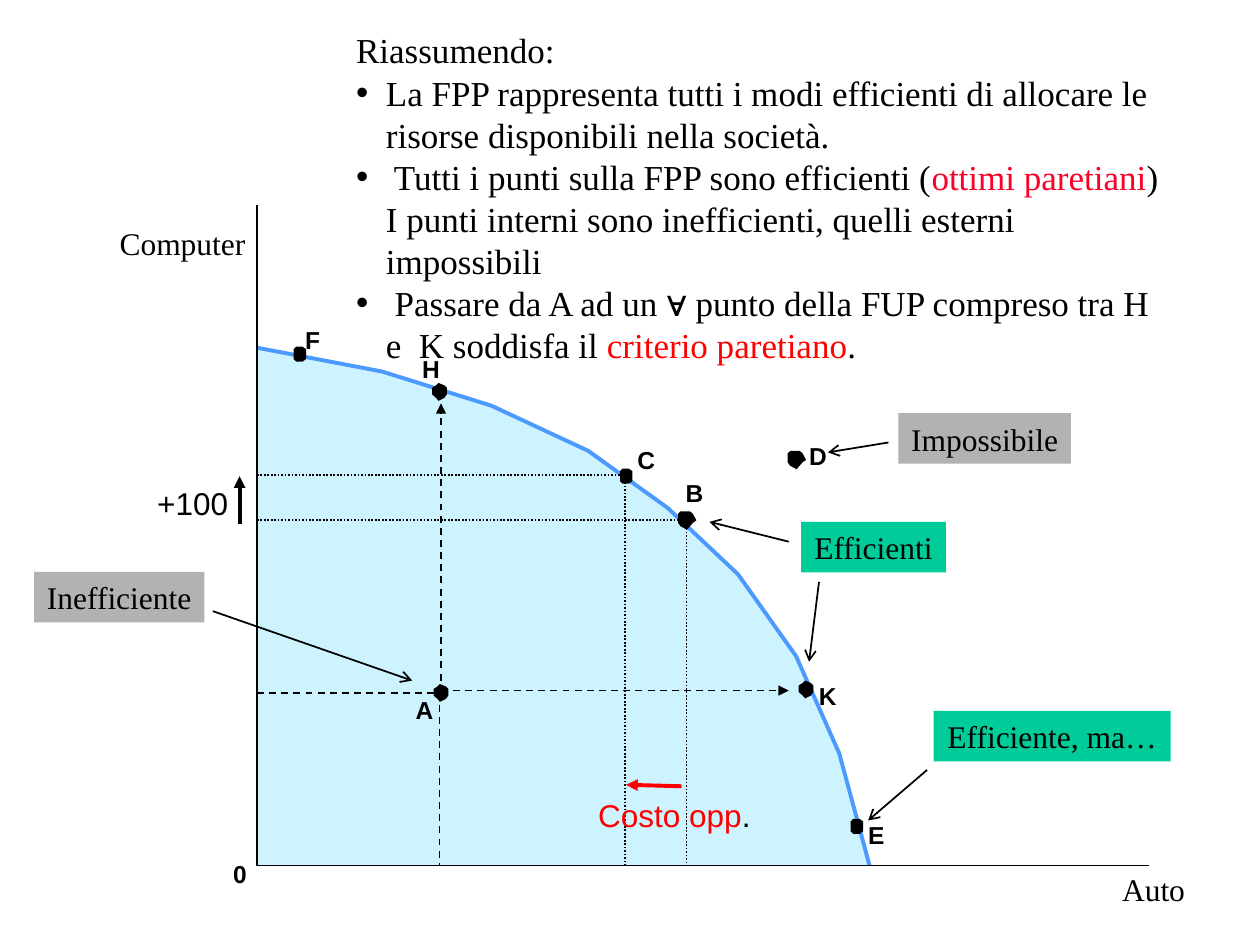
from typing import NamedTuple

from lxml import etree
from pptx import Presentation
from pptx.dml.color import RGBColor
from pptx.enum.dml import MSO_LINE
from pptx.enum.shapes import MSO_CONNECTOR, MSO_SHAPE
from pptx.enum.text import MSO_AUTO_SIZE, PP_ALIGN
from pptx.oxml.ns import qn
from pptx.util import Cm, Pt

DASH, DOT = MSO_LINE.DASH, MSO_LINE.ROUND_DOT
LEFT, MID, RIGHT = PP_ALIGN.LEFT, PP_ALIGN.CENTER, PP_ALIGN.RIGHT
STRAIGHT, RECT = MSO_CONNECTOR.STRAIGHT, MSO_SHAPE.RECTANGLE
FIT = MSO_AUTO_SIZE.SHAPE_TO_FIT_TEXT
SERIF, SANS = "Times New Roman", "Arial"
COLORS = {
    "black": "000000", "red": "FF0000", "rose": "FC0128", "blue": "4D9AFF",
    "sky": "CDF3FF", "green": "00CC99", "gray": "B2B2B2",
}


class Dot(NamedTuple):
    name: str
    form: str
    spot: tuple[float, float]
    label: tuple[float, float]


class Tag(NamedTuple):
    text: str
    color: str
    box: tuple[float, float, float, float]


class Arrow(NamedTuple):
    start: tuple[float, float]
    end: tuple[float, float]
    tip: str = "arrow"
    color: str = "black"
    width: float = 1
    dash: MSO_LINE | None = None


# Axes, frontier and guides, in cm
X0, Y0 = 5.18, 17.45
CURVE = [(17.53, Y0), (16.92, 15.19), (16.05, 13.23), (14.88, 11.58), (13.46, 10.24),
         (11.86, 9.09), (9.91, 8.18), (7.7, 7.49), (X0, 7.01)]
GUIDES = [(8.86, 13.97, DASH), (12.6, 9.58, DOT), (13.84, 10.49, DOT)]

# Outlines of the dots, from their top left corner
FORMS = {
    "hex": [(.13, .36), (.25, .3), (.3, .23), (.3, .1), (.25, .05), (.13, 0),
            (.08, .05), (0, .1), (0, .23), (.08, .3)],
    "oct": [(.18, .3), (.25, .25), (.25, .05), (.18, 0), (.05, 0), (0, .05),
            (0, .25), (.05, .3)],
    "blob": [(.18, .37), (.3, .23), (.37, .18), (.3, .05), (.24, 0), (.05, 0),
             (0, .05), (0, .23), (.05, .3)],
}
DOTS = [
    Dot("A", "hex", (8.74, 13.79), (8.38, 14.02)),
    Dot("B", "blob", (13.67, 10.31), (13.82, 9.63)),
    Dot("C", "oct", (12.5, 9.45), (12.85, 8.97)),
    Dot("D", "blob", (15.88, 9.09), (16.31, 8.89)),
    Dot("E", "oct", (17.15, 16.51), (17.5, 16.54)),
    Dot("F", "oct", (5.92, 6.99), (6.15, 6.55)),
    Dot("H", "hex", (8.71, 7.72), (8.51, 7.14)),
    Dot("K", "hex", (16.1, 13.72), (16.51, 13.72)),
]
TAGS = [
    Tag("Efficiente, ma…", "green", (18.82, 14.33, 4.78, 1.02)),
    Tag("Inefficiente", "gray", (.69, 11.53, 3.43, 1.02)),
    Tag("Impossibile", "gray", (18.11, 8.33, 3.48, 1.02)),
    Tag("Efficienti", "green", (16.15, 10.52, 2.92, 1.02)),
]
ARROWS = [
    Arrow((18.69, 15.52), (17.5, 16.54)),
    Arrow((4.29, 12.32), (8.31, 13.72)),
    Arrow((17.91, 8.92), (16.69, 9.12)),
    Arrow((15.9, 10.92), (14.3, 10.52)),
    Arrow((16.51, 11.73), (16.31, 13.34)),
    Arrow((8.89, 13.72), (8.89, 8.13), "triangle", dash=DASH),
    Arrow((8.89, 13.92), (15.9, 13.92), "triangle", dash=DASH),
    Arrow((13.74, 15.85), (12.62, 15.82), "triangle", "red", 2.25),
    Arrow((4.83, 10.57), (4.83, 9.6), "triangle", "black", 2.25),
]
# Paragraphs of the summary: runs of text and colour
NOTES = [
    [("Riassumendo:", "black")],
    [("La FPP rappresenta tutti i modi efficienti di allocare le risorse "
      "disponibili nella società.", "black")],
    [(" Tutti i punti sulla FPP sono efficienti (", "black"), ("ottimi paretiani", "rose"),
     (") I punti interni sono inefficienti, quelli esterni impossibili", "black")],
    [(" Passare da A ad un ∀ punto della FUP compreso tra H e  K soddisfa il ", "black"),
     ("criterio paretiano", "red"), (".", "black")],
]


def rgb(name: str) -> RGBColor:
    return RGBColor.from_string(COLORS[name])


def write(shape, text, *, size=18, font=SERIF, bold=False, align=LEFT, wrap=False, pad=True):
    """Fill a shape with a string or with paragraphs of (text, colour) runs."""
    frame = shape.text_frame
    frame.word_wrap, frame.auto_size = wrap, FIT
    if not pad:
        frame.margin_left = frame.margin_right = frame.margin_top = frame.margin_bottom = 0
    paras = [[(text, "black")]] if isinstance(text, str) else text
    for i, runs in enumerate(paras):
        para = frame.add_paragraph() if i else frame.paragraphs[0]
        para.alignment = align
        for words, color in runs:
            run = para.add_run()
            run.text = words
            run.font.size, run.font.name, run.font.bold = Pt(size), font, bold
            run.font.color.rgb = rgb(color)
    return frame


def add_text(slide, box, text, **style):
    return write(slide.shapes.add_textbox(*map(Cm, box)), text, **style)


def bullet(para, gap: float) -> None:
    props = para._p.get_or_add_pPr()
    props.set("marL", str(Cm(gap)))
    props.set("indent", str(-Cm(gap)))
    etree.SubElement(props, qn("a:buFont")).set("typeface", SANS)
    etree.SubElement(props, qn("a:buChar")).set("char", "•")


def add_path(slide, points, *, fill=None, line=None, width=1.0, dash=None) -> None:
    spots = [(Cm(x), Cm(y)) for x, y in points]
    pen = slide.shapes.build_freeform(*spots[0])
    pen.add_line_segments(spots[1:], close=fill is not None)
    shape = pen.convert_to_shape()
    shape.shadow.inherit = False
    if fill:
        shape.fill.solid()
        shape.fill.fore_color.rgb = rgb(fill)
    else:
        shape.fill.background()
    if line:
        shape.line.color.rgb, shape.line.width = rgb(line), Pt(width)
        shape.line.dash_style = dash
    else:
        shape.line.fill.background()


def add_dot(slide, dot: Dot) -> None:
    x, y = dot.spot
    add_path(slide, [(x + dx, y + dy) for dx, dy in FORMS[dot.form]], fill="black")
    add_text(slide, (*dot.label, .36, .59), dot.name, size=14, font=SANS, bold=True, pad=False)


def add_tag(slide, tag: Tag) -> None:
    shape = slide.shapes.add_shape(RECT, *map(Cm, tag.box))
    shape.shadow.inherit = False
    shape.fill.solid()
    shape.fill.fore_color.rgb = rgb(tag.color)
    shape.line.fill.background()
    write(shape, tag.text, align=MID)


def add_arrow(slide, arrow: Arrow) -> None:
    link = slide.shapes.add_connector(STRAIGHT, *map(Cm, arrow.start + arrow.end))
    link.line.color.rgb, link.line.width = rgb(arrow.color), Pt(arrow.width)
    link.line.dash_style = arrow.dash
    etree.SubElement(link.line._get_or_add_ln(), qn("a:tailEnd")).set("type", arrow.tip)
    etree.SubElement(link._element.spPr, qn("a:effectLst"))


def main() -> None:
    deck = Presentation()
    deck.slide_width, deck.slide_height = Cm(25.4), Cm(19.05)
    slide = deck.slides.add_slide(deck.slide_layouts[6])

    # Area, frontier, axes and guides
    add_path(slide, CURVE + [(X0, Y0)], fill="sky")
    add_path(slide, CURVE, line="blue", width=2.25)
    add_path(slide, [(X0, 4.14), (X0, Y0), (23.16, Y0)], line="black")
    for x, y, dash in GUIDES:
        add_path(slide, [(X0, y), (x, y), (x, Y0)], line="black", dash=dash)

    # Axis names
    add_text(slide, (1.5, 4.52, 3.45, .76), "Computer", align=RIGHT, wrap=True, pad=False)
    add_text(slide, (22.1, 17.53, 2.31, .76), "Auto", align=MID, wrap=True, pad=False)
    add_text(slide, (4.7, 17.32, .28, .59), "0", size=14, font=SANS, bold=True, pad=False)

    # Summary
    notes = add_text(slide, (6.93, .46, 16.69, 6.25), NOTES, size=20, wrap=True)
    for para in notes.paragraphs[1:]:
        bullet(para, .6)

    # Points, tags and arrows
    for draw, items in ((add_dot, DOTS), (add_tag, TAGS), (add_arrow, ARROWS)):
        for item in items:
            draw(slide, item)

    # Change in output and its cost
    add_text(slide, (2.92, 9.63, 2.31, 1.02), "+100", font=SANS, wrap=True)
    add_text(slide, (11.81, 15.93, 3.61, 1.02), [[("Costo opp", "red"), (".", "black")]], font=SANS)

    deck.save("out.pptx")


if __name__ == "__main__":
    main()
